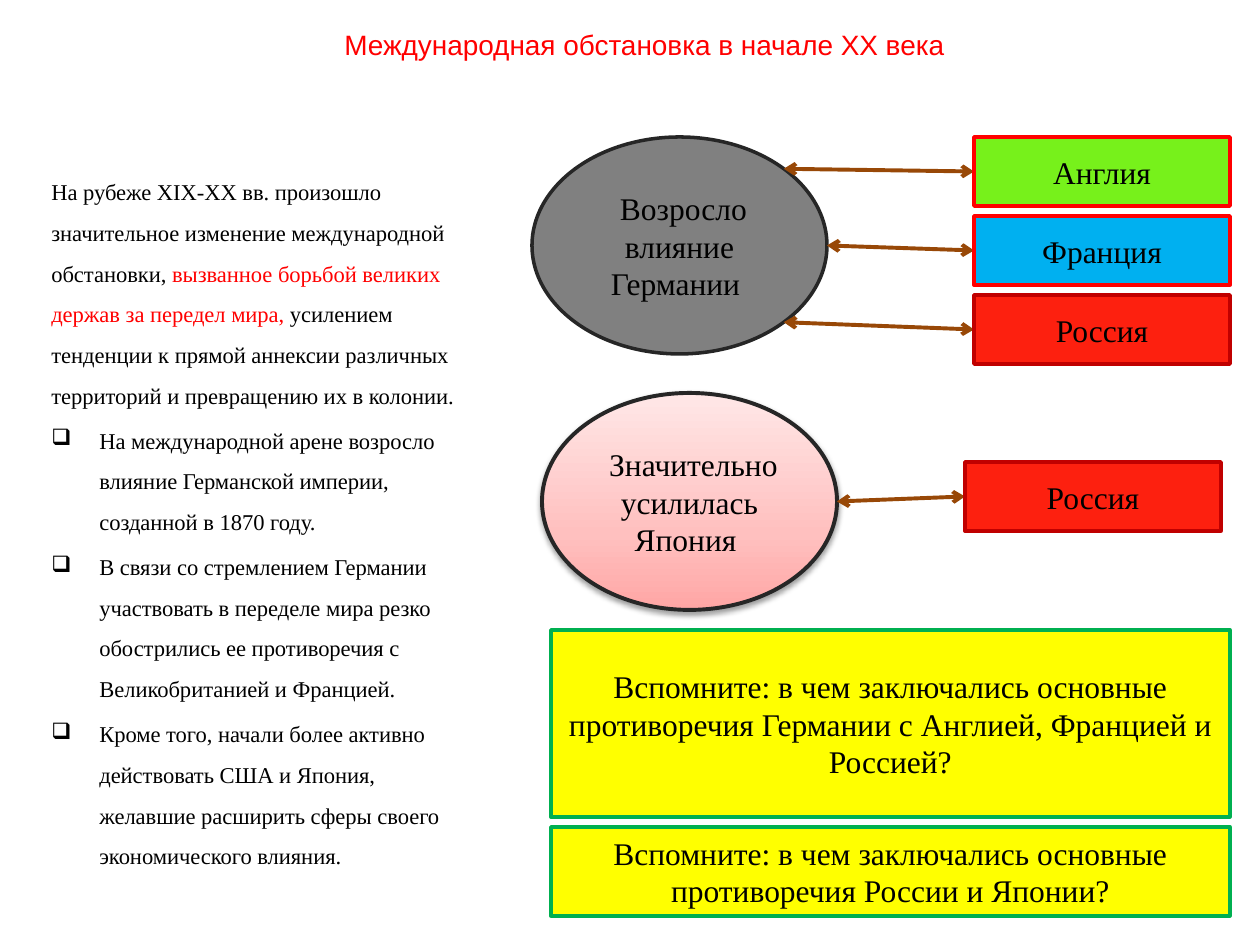
from copy import deepcopy
from dataclasses import dataclass
from math import cos, radians, sin

from lxml.etree import SubElement
from pptx import Presentation
from pptx.dml.color import RGBColor
from pptx.enum.shapes import MSO_CONNECTOR, MSO_SHAPE
from pptx.enum.text import MSO_ANCHOR, PP_ALIGN
from pptx.oxml.ns import qn
from pptx.util import Emu, Pt


@dataclass(frozen=True)
class Theme:
    heading_font: str = "Arial"
    text_font: str = "Times New Roman"
    title_size: float = 16
    body_size: float = 12.9
    label_size: float = 18
    black: str = "000000"
    red: str = "FF0000"
    dark_red: str = "C00000"
    russia: str = "FD200F"
    england: str = "77F11B"
    france: str = "00B0F0"
    germany: str = "808080"
    japan: tuple = ((0, "FFA6A5"), (0.35, "FFC0BF"), (1, "FFE7E7"))
    oval_line: str = "262626"
    arrow: str = "984807"
    question: str = "FFFF00"
    question_line: str = "00B050"


THEME = Theme()
OVAL_SIZE = (295, 217)
COUNTRY_SIZE = (256, 69)
COUNTRY_PITCH = 79


def px(length):
    return Emu(round(length * 914400 / 126))


def rgb(value):
    return RGBColor.from_string(value)


def write(paragraph, text, *, size=THEME.label_size, font=THEME.text_font,
          color=THEME.black, align=PP_ALIGN.CENTER):
    """Add one formatted run to a paragraph."""
    paragraph.alignment = align
    run = paragraph.add_run()
    run.text = text
    run.font.size = Pt(size)
    run.font.name = font
    run.font.color.rgb = rgb(color)


def fill_gradient(shape, stops):
    """Fill upwards with the given stops."""
    shape.fill.gradient()
    shape.fill.gradient_angle = 90
    stop_list = shape.fill.gradient_stops
    gs_list = shape.element.spPr.find(".//" + qn("a:gsLst"))
    for _ in range(len(stops) - len(stop_list)):
        gs_list.append(deepcopy(gs_list[-1]))
    for stop, (position, color) in zip(shape.fill.gradient_stops, stops):
        stop.position = position
        stop.color.rgb = rgb(color)


def add_soft_shadow(shape):
    effects = shape.element.spPr.find(qn("a:effectLst"))
    outer = SubElement(effects, qn("a:outerShdw"), blurRad=str(Pt(3.1)),
                       dist=str(Pt(1.6)), dir="5400000", rotWithShape="0")
    color = SubElement(outer, qn("a:srgbClr"), val=THEME.black)
    SubElement(color, qn("a:alpha"), val="38000")


def add_label(slide, kind, box, text, fill, line, width=2):
    """Outlined shape with centred text."""
    shape = slide.shapes.add_shape(kind, *map(px, box))
    shape.shadow.inherit = False
    if isinstance(fill, tuple):
        fill_gradient(shape, fill)
    else:
        shape.fill.solid()
        shape.fill.fore_color.rgb = rgb(fill)
    shape.line.color.rgb = rgb(line)
    shape.line.width = Pt(width)
    frame = shape.text_frame
    frame.word_wrap = True
    frame.vertical_anchor = MSO_ANCHOR.MIDDLE
    write(frame.paragraphs[0], text)
    return shape


def add_double_arrow(slide, start, end):
    arrow = slide.shapes.add_connector(MSO_CONNECTOR.STRAIGHT, *map(px, start + end))
    arrow.line.color.rgb = rgb(THEME.arrow)
    arrow.line.width = Pt(2.25)
    line = arrow.line._get_or_add_ln()
    for tag in ("a:headEnd", "a:tailEnd"):
        SubElement(line, qn(tag), type="arrow")
    SubElement(arrow.element.spPr, qn("a:effectLst"))


def add_title(slide, box, text):
    title = slide.shapes.title
    title.left, title.top, title.width, title.height = map(px, box)
    title.text_frame.vertical_anchor = MSO_ANCHOR.MIDDLE
    write(title.text_frame.paragraphs[0], text, size=THEME.title_size,
          font=THEME.heading_font, color=THEME.red)


def add_body(slide, box, intro, bullets):
    """Intro paragraph with coloured runs, then a checkbox list."""
    frame = slide.shapes.add_textbox(*map(px, box)).text_frame
    frame.word_wrap = True
    frame.vertical_anchor = MSO_ANCHOR.MIDDLE
    for number, runs in enumerate([intro] + [[(text, THEME.black)] for text in bullets]):
        paragraph = frame.add_paragraph() if number else frame.paragraphs[0]
        paragraph.line_spacing = 1.5
        paragraph.space_before = Pt(2.6)
        for text, color in runs:
            write(paragraph, text, size=THEME.body_size, color=color, align=PP_ALIGN.LEFT)
        if number:
            properties = paragraph._p.get_or_add_pPr()
            properties.set("marL", str(px(48)))
            properties.set("indent", str(-px(48)))
            SubElement(properties, qn("a:buChar"), char="❑")


def add_rivalry(slide, origin, power, rivals, rivals_at, angles):
    """Oval for a power, with arrows to its column of rivals."""
    left, top = origin
    width, height = OVAL_SIZE
    text, fill, line_width = power
    oval = add_label(slide, MSO_SHAPE.OVAL, origin + OVAL_SIZE, text, fill,
                     THEME.oval_line, line_width)
    x, first_y = left + rivals_at[0], top + rivals_at[1]
    for row, ((name, color, line), angle) in enumerate(zip(rivals, angles)):
        y = first_y + row * COUNTRY_PITCH
        rim = (left + width / 2 * (1 + cos(radians(angle))),
               top + height / 2 * (1 + sin(radians(angle))))
        add_double_arrow(slide, rim, (x, y + COUNTRY_SIZE[1] / 2))
        add_label(slide, MSO_SHAPE.RECTANGLE, (x, y) + COUNTRY_SIZE, name, color, line)
    return oval


def add_questions(slide, box, questions, gap):
    left, top, width = box
    for text, height in questions:
        add_label(slide, MSO_SHAPE.RECTANGLE, (left, top, width, height), text,
                  THEME.question, THEME.question_line)
        top += height + gap


def main():
    deck = Presentation()
    deck.slide_width, deck.slide_height = px(1260), px(945)
    slide = deck.slides.add_slide(deck.slide_layouts[5])

    add_title(slide, (29, 0, 1231, 88), "Международная обстановка в начале ХХ века")
    add_body(slide, (39, 118, 438, 798), [
        ("На рубеже XIX-XX вв. произошло значительное изменение международной обстановки, ",
         THEME.black),
        ("вызванное борьбой великих держав за передел мира, ", THEME.red),
        ("усилением тенденции к прямой аннексии различных территорий "
         "и превращению их в колонии.", THEME.black),
    ], [
        "На международной арене возросло влияние Германской империи, созданной в 1870 году.",
        "В связи со стремлением Германии участвовать в переделе мира резко обострились "
        "ее противоречия с Великобританией и Францией.",
        "Кроме того, начали более активно действовать США и Япония, желавшие расширить "
        "сферы своего экономического влияния.",
    ])

    # Powers and their rivals
    russia = ("Россия", THEME.russia, THEME.dark_red)
    add_rivalry(slide, (532, 137), (" Возросло влияние Германии ", THEME.germany, 2), [
        ("Англия", THEME.england, THEME.red),
        ("Франция", THEME.france, THEME.red),
        russia,
    ], (442, 0), (-45, 0, 45))
    japan = add_rivalry(slide, (542, 393), (" Значительно усилилась Япония ", THEME.japan, 2.25),
                        [russia], (423, 69), (0,))
    add_soft_shadow(japan)

    # Questions to the class
    add_questions(slide, (551, 630, 679), [
        ("Вспомните: в чем заключались основные противоречия Германии с Англией, "
         "Францией и Россией?", 187),
        ("Вспомните: в чем заключались основные противоречия России и Японии?", 89),
    ], gap=10)
    deck.save("out.pptx")


if __name__ == "__main__":
    main()
